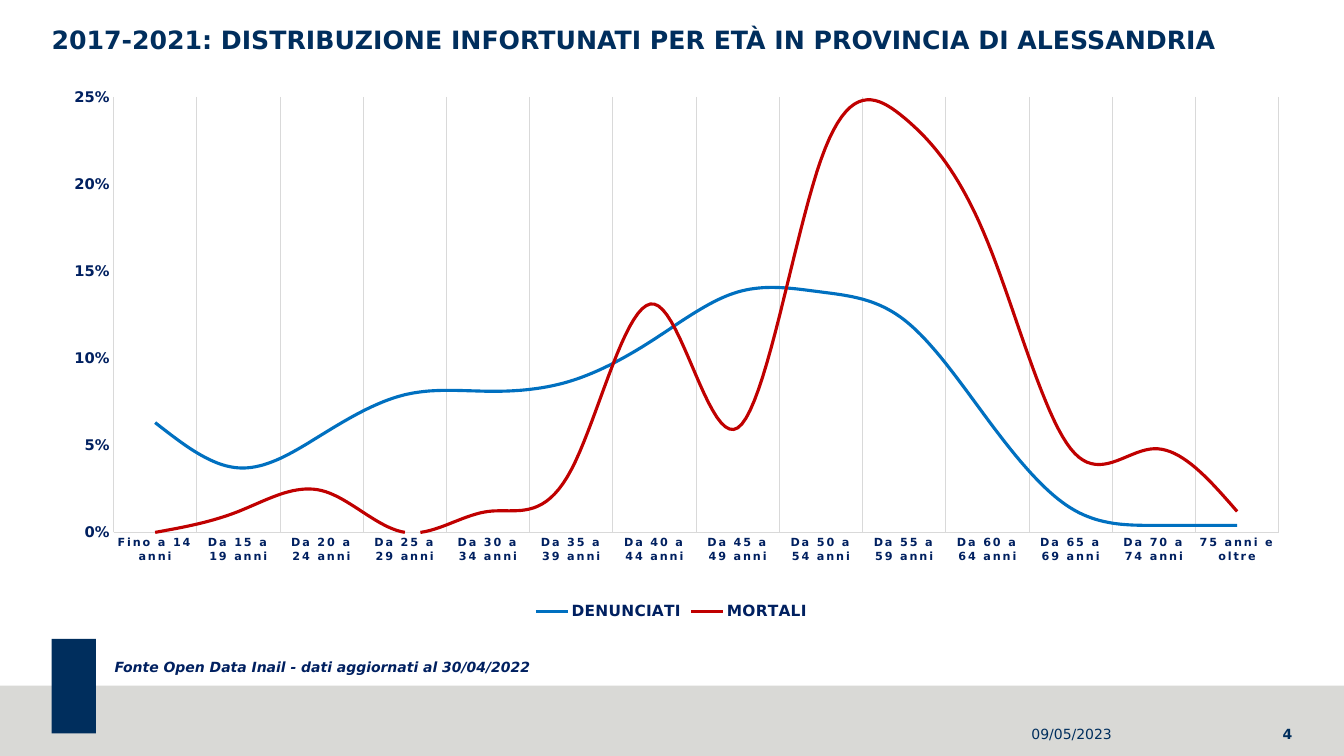
from dataclasses import dataclass

from lxml import etree
from pptx import Presentation
from pptx.chart.data import CategoryChartData
from pptx.dml.color import RGBColor
from pptx.enum.chart import XL_CHART_TYPE, XL_LEGEND_POSITION, XL_MARKER_STYLE, XL_TICK_MARK
from pptx.enum.shapes import MSO_SHAPE
from pptx.enum.text import MSO_ANCHOR, MSO_AUTO_SIZE, PP_ALIGN
from pptx.oxml.ns import qn
from pptx.util import Cm, Pt

LINE = XL_CHART_TYPE.LINE
BOTTOM = XL_LEGEND_POSITION.BOTTOM
NO_MARKER = XL_MARKER_STYLE.NONE
NO_TICK = XL_TICK_MARK.NONE
RECT = MSO_SHAPE.RECTANGLE
TOP, MIDDLE = MSO_ANCHOR.TOP, MSO_ANCHOR.MIDDLE
LEFT, RIGHT = PP_ALIGN.LEFT, PP_ALIGN.RIGHT


@dataclass(frozen=True)
class Theme:
    font: str = "DejaVu Sans"
    navy: str = "002E5D"
    ink: str = "002060"
    band: str = "D9D9D6"
    grid: str = "D9D9D9"
    blue: str = "0070C0"
    red: str = "C00000"
    title: float = 18
    legend: float = 11
    values: float = 10.5
    small: float = 10
    ages: float = 8


T = Theme()


def set_font(font, size, color=T.ink, bold=True, italic=False):
    font.name, font.size = T.font, Pt(size)
    font.bold, font.italic = bold, italic
    font.color.rgb = RGBColor.from_string(color)


def write(sp, text, size=T.small, color=T.navy, bold=True, italic=False,
          align=LEFT, anchor=MIDDLE, inset=0):
    tf = sp.text_frame
    tf.word_wrap = True
    tf.auto_size = MSO_AUTO_SIZE.NONE
    tf.vertical_anchor = anchor
    tf.margin_left = tf.margin_right = Cm(inset)
    tf.margin_top = tf.margin_bottom = Cm(inset / 2)
    p = tf.paragraphs[0]
    p.alignment = align
    r = p.add_run()
    r.text = text
    set_font(r.font, size, color, bold, italic)
    return p


prs = Presentation()
prs.slide_width, prs.slide_height = Cm(33.87), Cm(19.05)
s = prs.slides.add_slide(prs.slide_layouts[5])

for x, y, w, h, color in [
    (0, 17.28, 33.87, 1.77, T.band),
    (1.3, 16.1, 1.12, 2.38, T.navy),
]:
    sp = s.shapes.add_shape(RECT, Cm(x), Cm(y), Cm(w), Cm(h))
    sp.shadow.inherit = False
    sp.fill.solid()
    sp.fill.fore_color.rgb = RGBColor.from_string(color)
    sp.line.fill.background()

title = s.shapes.title
title.left, title.top, title.width, title.height = Cm(1.3), Cm(0.7), Cm(31.3), Cm(1.94)
p = write(title, "2017-2021: DISTRIBUZIONE INFORTUNATI PER ETÀ IN PROVINCIA DI ALESSANDRIA",
          size=T.title, anchor=TOP)
p.line_spacing = 0.9

source = s.shapes.add_textbox(Cm(2.64), Cm(16.48), Cm(29.95), Cm(0.69))
write(source, "Fonte Open Data Inail - dati aggiornati al 30/04/2022",
      color=T.ink, italic=True, anchor=TOP, inset=0.25)

for x, text, bold in [(24, "09/05/2023", False), (28.55, "4", True)]:
    sp = s.shapes.add_textbox(Cm(x), Cm(17.98), Cm(4.02), Cm(1.02))
    write(sp, text, bold=bold, align=RIGHT)

ages = [f"Da {a} a {a + 4} anni" for a in range(15, 75, 5)]
data = CategoryChartData(number_format="0.0%")
data.categories = ["Fino a 14 anni", *ages, "75 anni e oltre"]
data.add_series("DENUNCIATI", [0.063, 0.037, 0.056, 0.079, 0.081, 0.087, 0.111,
                               0.138, 0.138, 0.122, 0.065, 0.014, 0.004, 0.004])
data.add_series("MORTALI", [0, 0.012, 0.024, 0, 0.012, 0.036, 0.131,
                            0.06, 0.214, 0.238, 0.167, 0.048, 0.048, 0.012])
chart = s.shapes.add_chart(LINE, Cm(1.3), Cm(2.03), Cm(31.24), Cm(13.72), data).chart
set_font(chart.font, T.small, bold=False)
chart.has_title = False
chart.has_legend = True
chart.legend.position = BOTTOM
chart.legend.include_in_layout = False
set_font(chart.legend.font, T.legend)

plot = chart.plots[0]
plot.vary_by_categories = False
for series, color in zip(plot.series, (T.blue, T.red)):
    series.smooth = True
    series.marker.style = NO_MARKER
    series.format.line.width = Pt(2.25)
    series.format.line.color.rgb = RGBColor.from_string(color)

cat, val = chart.category_axis, chart.value_axis
cat.has_major_gridlines, val.has_major_gridlines = True, False
for axis, size in ((cat, T.ages), (val, T.values)):
    axis.major_tick_mark = axis.minor_tick_mark = NO_TICK
    set_font(axis.tick_labels.font, size)
for part in (cat, val, cat.major_gridlines):
    part.format.line.width = Pt(0.75)
    part.format.line.color.rgb = RGBColor.from_string(T.grid)
val.minimum_scale, val.maximum_scale, val.major_unit = 0, 0.25, 0.05
val.tick_labels.number_format = "0%"
val.tick_labels.number_format_is_linked = False

for rpr in cat._element.iter(qn("a:defRPr")):
    rpr.set("spc", "120")

area = chart._chartSpace.chart.plotArea
for old in area.findall(qn("c:layout")):
    area.remove(old)
layout = etree.Element(qn("c:layout"))
manual = etree.SubElement(layout, qn("c:manualLayout"))
for tag, value in [("layoutTarget", "inner"), ("xMode", "edge"), ("yMode", "edge"),
                   ("x", "0.05"), ("y", "0.03"), ("w", "0.94"), ("h", "0.8")]:
    etree.SubElement(manual, qn(f"c:{tag}")).set("val", value)
area.insert(0, layout)

prs.save("out.pptx")
